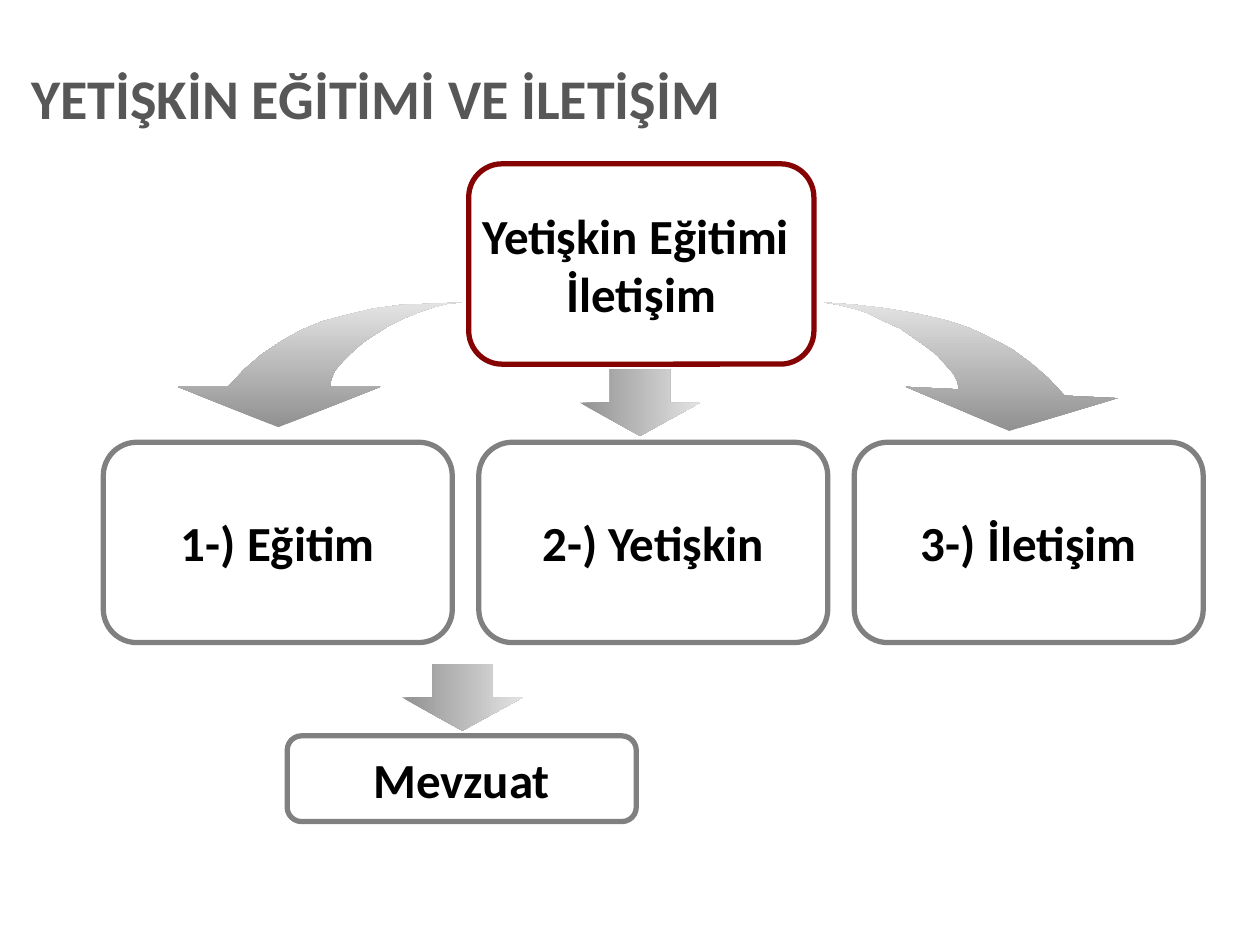
from pptx import Presentation
from pptx.dml.color import RGBColor
from pptx.enum.shapes import MSO_SHAPE
from pptx.enum.text import MSO_ANCHOR, PP_ALIGN
from pptx.util import Inches, Pt

ROUNDED = MSO_SHAPE.ROUNDED_RECTANGLE
DOWN_ARROW = MSO_SHAPE.DOWN_ARROW
MIDDLE = MSO_ANCHOR.MIDDLE
LEFT, CENTER = PP_ALIGN.LEFT, PP_ALIGN.CENTER

BLACK = RGBColor(0x00, 0x00, 0x00)
DARK_GRAY = RGBColor(0x57, 0x57, 0x57)
BORDER_GRAY = RGBColor(0x80, 0x80, 0x80)
DARK_RED = RGBColor(0x85, 0x03, 0x03)
ARROW_DARK = RGBColor(0x91, 0x91, 0x91)
ARROW_LIGHT = RGBColor(0xE3, 0xE3, 0xE3)


def write_text(shape, lines, size=28, color=BLACK, align=CENTER, wrap=False,
               side_margin=0.1, line_spacing=None):
    frame = shape.text_frame
    frame.word_wrap = wrap
    frame.vertical_anchor = MIDDLE
    frame.margin_left = frame.margin_right = Inches(side_margin)
    frame.margin_top = frame.margin_bottom = Inches(0.05)
    for index, line in enumerate(lines):
        paragraph = frame.add_paragraph() if index else frame.paragraphs[0]
        paragraph.alignment = align
        paragraph.line_spacing = line_spacing
        run = paragraph.add_run()
        run.text = line
        run.font.name = "Calibri"
        run.font.size = Pt(size)
        run.font.bold = True
        run.font.color.rgb = color


def style_arrow(shape, angle):
    shape.shadow.inherit = False
    shape.line.fill.background()
    shape.fill.gradient()
    shape.fill.gradient_angle = angle
    for stop, position, color in zip(shape.fill.gradient_stops, (0, 1),
                                     (ARROW_DARK, ARROW_LIGHT)):
        stop.position = position
        stop.color.rgb = color


presentation = Presentation()
presentation.slide_width = Inches(10)
presentation.slide_height = Inches(7.5)
slide = presentation.slides.add_slide(presentation.slide_layouts[5])

title = slide.shapes.title
title.left, title.top = Inches(0.25), Inches(0.45)
title.width, title.height = Inches(9.64), Inches(0.71)
write_text(title, ["YETİŞKİN EĞİTİMİ VE İLETİŞİM"], size=32, color=DARK_GRAY,
           align=LEFT, wrap=True, side_margin=0, line_spacing=0.9)

boxes = [
    (3.72, 1.3, 2.74, 1.59, DARK_RED, ["Yetişkin Eğitimi ", "İletişim"]),
    (2.28, 5.84, 2.77, 0.68, BORDER_GRAY, ["Mevzuat"]),
]
for column, topic in enumerate(["1-) Eğitim", "2-) Yetişkin", "3-) İletişim"]):
    boxes.append((0.82 + 2.98 * column, 3.51, 2.77, 1.59, BORDER_GRAY, [topic]))

for left, top, width, height, border, lines in boxes:
    box = slide.shapes.add_shape(ROUNDED, Inches(left), Inches(top),
                                 Inches(width), Inches(height))
    box.shadow.inherit = False
    box.fill.background()
    box.line.color.rgb = border
    box.line.width = Pt(3)
    write_text(box, lines)

RIGHT_ARROW_POINTS = [
    (654, 240), (680, 242), (705, 245), (728, 249), (750, 254), (769, 260),
    (786, 268), (803, 277), (818, 288), (832, 300), (845, 314), (887, 316),
    (801, 342), (719, 307), (761, 309), (760, 303), (757, 297), (751, 290),
    (744, 282), (735, 275), (725, 268), (715, 261), (702, 255), (690, 249),
    (678, 245), (666, 242),
]
LEFT_ARROW_POINTS = [
    (367, 240), (342, 241), (318, 242), (296, 245), (275, 250), (256, 255),
    (239, 262), (223, 271), (208, 281), (194, 293), (181, 307), (141, 307),
    (221, 339), (302, 307), (262, 307), (263, 301), (266, 294), (272, 287),
    (279, 280), (288, 272), (297, 266), (308, 259), (320, 253), (332, 248),
    (344, 244), (356, 241),
]
for points in (RIGHT_ARROW_POINTS, LEFT_ARROW_POINTS):
    builder = slide.shapes.build_freeform(*points[0], scale=Inches(0.01))
    builder.add_line_segments(points[1:], close=True)
    style_arrow(builder.convert_to_shape(), 90)

for left, top in ((4.6, 2.93), (3.19, 5.27)):
    arrow = slide.shapes.add_shape(DOWN_ARROW, Inches(left), Inches(top),
                                   Inches(0.96), Inches(0.53))
    style_arrow(arrow, 0)

presentation.save("out.pptx")
